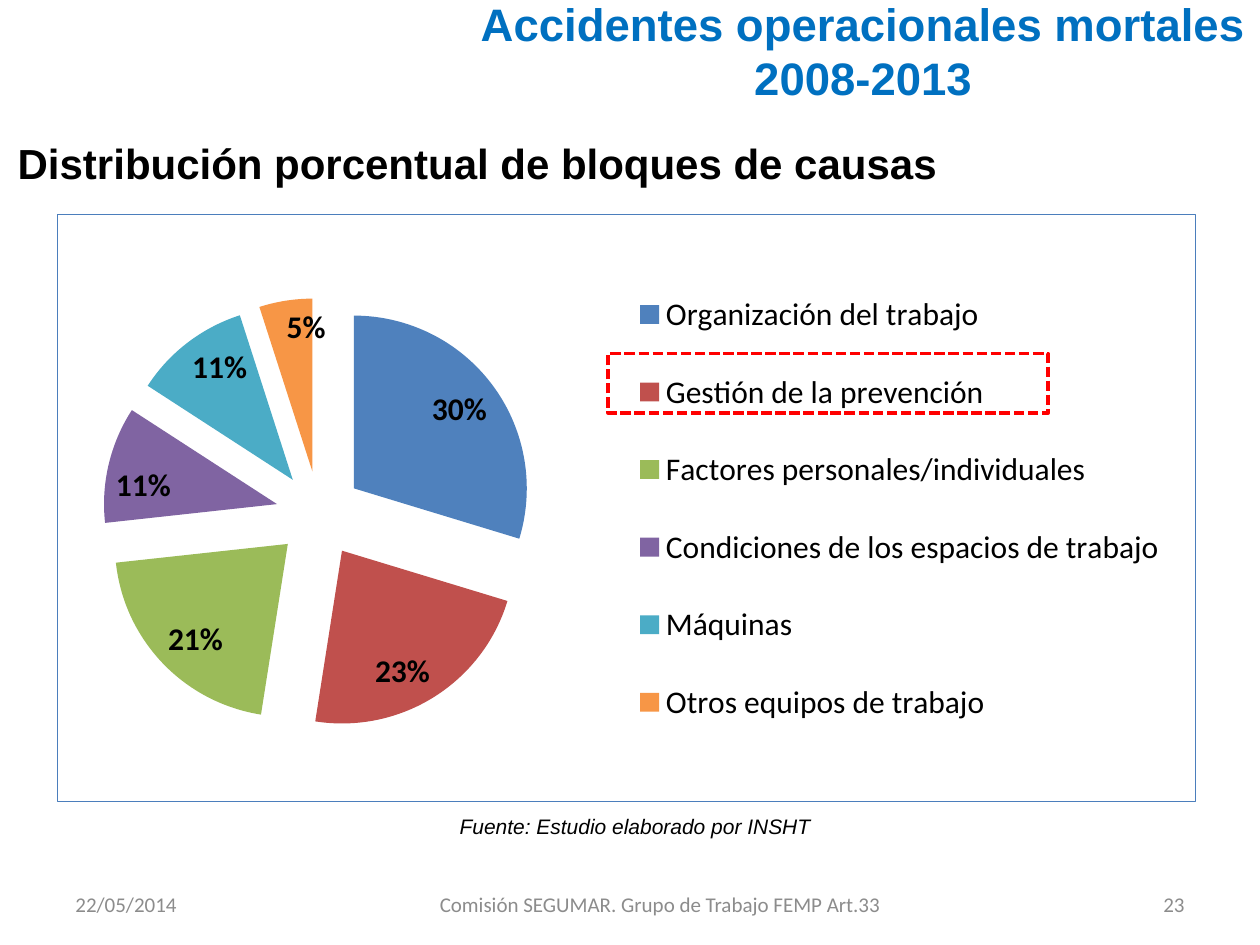
from lxml.etree import SubElement
from pptx import Presentation
from pptx.chart.data import CategoryChartData
from pptx.dml.color import RGBColor
from pptx.enum.chart import XL_CHART_TYPE, XL_LABEL_POSITION, XL_LEGEND_POSITION
from pptx.enum.dml import MSO_LINE
from pptx.enum.shapes import MSO_SHAPE
from pptx.enum.text import MSO_ANCHOR, PP_ALIGN
from pptx.oxml import parse_xml
from pptx.oxml.ns import nsdecls, qn
from pptx.util import Pt

# Content: causes with percentage and slice colour
CAUSES = [
    ("Organización del trabajo", 30, "4F81BD"),
    ("Gestión de la prevención", 23, "C0504D"),
    ("Factores personales/individuales", 21, "9BBB59"),
    ("Condiciones de los espacios de trabajo", 11, "8064A2"),
    ("Máquinas", 11, "4BACC6"),
    ("Otros equipos de trabajo", 5, "F79646"),
]
TITLE = ["Accidentes operacionales mortales", "2008-2013"]
SUBTITLE = ["Distribución porcentual de bloques de causas"]
SOURCE = ["Fuente: Estudio elaborado por INSHT"]

# Footer: text, left, width, alignment
FOOTER = [
    ("22/05/2014", 36, 168, PP_ALIGN.LEFT),
    ("Comisión SEGUMAR. Grupo de Trabajo FEMP Art.33", 235.5, 283.5, PP_ALIGN.CENTER),
    ("23", 592.5, 91.5, PP_ALIGN.RIGHT),
]

# Boxes as left, top, width, height
TITLE_BOX = (263.5, -8, 459.5, 73.5)
SUBTITLE_BOX = (3, 75, 716, 36)
CHART_BOX = (32.4, 122.4, 651, 336.2)
HIGHLIGHT_BOX = (347.5, 202, 251.5, 34)
SOURCE_BOX = (245.5, 461.5, 235, 21.6)
FOOTER_TOP, FOOTER_HEIGHT = 502.5, 28.8

# Fractions of the chart area
PLOT_AREA = (0.04, 0.11, 0.38, 0.8)
LEGEND_AREA = (0.5, 0.07, 0.48, 0.86)
EXPLOSION = 25


def color(hex_value):
    return RGBColor.from_string(hex_value)


def lengths(box):
    return [Pt(value) for value in box]


def add_text(slide, lines, box, size, hex_value, font="Arial", align=PP_ALIGN.LEFT,
             anchor=MSO_ANCHOR.TOP, bold=False, italic=False):
    frame = slide.shapes.add_textbox(*lengths(box)).text_frame
    frame.word_wrap = True
    frame.vertical_anchor = anchor
    frame.text = "\n".join(lines)
    for paragraph in frame.paragraphs:
        paragraph.alignment = align
        paragraph.font.name = font
        paragraph.font.size = Pt(size)
        paragraph.font.bold = bold
        paragraph.font.italic = italic
        paragraph.font.color.rgb = color(hex_value)


def manual_layout(area, inner=False):
    layout = parse_xml(f"<c:layout {nsdecls('c')}><c:manualLayout/></c:layout>")
    settings = [("layoutTarget", "inner")] if inner else []
    settings += [("xMode", "edge"), ("yMode", "edge"), *zip("xywh", area)]
    for tag, value in settings:
        SubElement(layout[0], qn(f"c:{tag}")).set("val", str(value))
    return layout


def remove_layout(element):
    for layout in element.findall(qn("c:layout")):
        element.remove(layout)


def add_pie(slide):
    data = CategoryChartData()
    data.categories = [name for name, _, _ in CAUSES]
    data.add_series("Series 1", [value for _, value, _ in CAUSES])
    chart = slide.shapes.add_chart(XL_CHART_TYPE.PIE, *lengths(CHART_BOX), data).chart
    chart.has_title = False
    chart.font.name = "Calibri"
    chart.font.size = Pt(10)
    chart.font.color.rgb = color("000000")

    # Exploded slices
    series = chart.plots[0].series[0]
    for index, (_, _, fill) in enumerate(CAUSES):
        point_fill = series.points[index].format.fill
        point_fill.solid()
        point_fill.fore_color.rgb = color(fill)
    explosion = parse_xml(f'<c:explosion {nsdecls("c")} val="{EXPLOSION}"/>')
    series._element.find(qn("c:dPt")).addprevious(explosion)

    # Percentage labels
    labels = series.data_labels
    labels.show_percentage = True
    labels.show_value = False
    labels.number_format = "0%"
    labels.number_format_is_linked = False
    labels.position = XL_LABEL_POSITION.INSIDE_END
    labels.font.name = "Calibri"
    labels.font.size = Pt(18)
    labels.font.bold = True
    labels.font.color.rgb = color("000000")

    # Legend
    chart.has_legend = True
    legend = chart.legend
    legend.position = XL_LEGEND_POSITION.RIGHT
    legend.include_in_layout = False
    legend.font.name = "Calibri"
    legend.font.size = Pt(18)
    legend.font.color.rgb = color("000000")
    remove_layout(legend._element)
    legend._element.find(qn("c:legendPos")).addnext(manual_layout(LEGEND_AREA))

    # Plot position and chart border
    chart_element = chart._chartSpace.find(qn("c:chart"))
    plot_area = chart_element.find(qn("c:plotArea"))
    remove_layout(plot_area)
    plot_area.insert(0, manual_layout(PLOT_AREA, inner=True))
    chart_element.addnext(parse_xml(
        f'<c:spPr {nsdecls("c", "a")}><a:noFill/><a:ln w="{Pt(0.75)}"><a:solidFill>'
        '<a:srgbClr val="4B7EBC"/></a:solidFill></a:ln></c:spPr>'))


def add_highlight(slide):
    shape = slide.shapes.add_shape(MSO_SHAPE.RECTANGLE, *lengths(HIGHLIGHT_BOX))
    shape.shadow.inherit = False
    shape.fill.background()
    shape.line.color.rgb = color("FF0000")
    shape.line.width = Pt(2)
    shape.line.dash_style = MSO_LINE.SQUARE_DOT


def main():
    presentation = Presentation()
    presentation.slide_width, presentation.slide_height = Pt(720), Pt(540)
    slide = presentation.slides.add_slide(presentation.slide_layouts[6])

    add_text(slide, SOURCE, SOURCE_BOX, 12, "000000", align=PP_ALIGN.CENTER, italic=True)
    add_text(slide, SUBTITLE, SUBTITLE_BOX, 24, "000000", bold=True)
    add_pie(slide)
    add_highlight(slide)
    add_text(slide, TITLE, TITLE_BOX, 26, "0070C0", align=PP_ALIGN.CENTER,
             anchor=MSO_ANCHOR.MIDDLE, bold=True)
    for text, left, width, align in FOOTER:
        add_text(slide, [text], (left, FOOTER_TOP, width, FOOTER_HEIGHT), 12, "8C8C8C",
                 font="Calibri", align=align, anchor=MSO_ANCHOR.MIDDLE)

    presentation.save("out.pptx")


if __name__ == "__main__":
    main()
